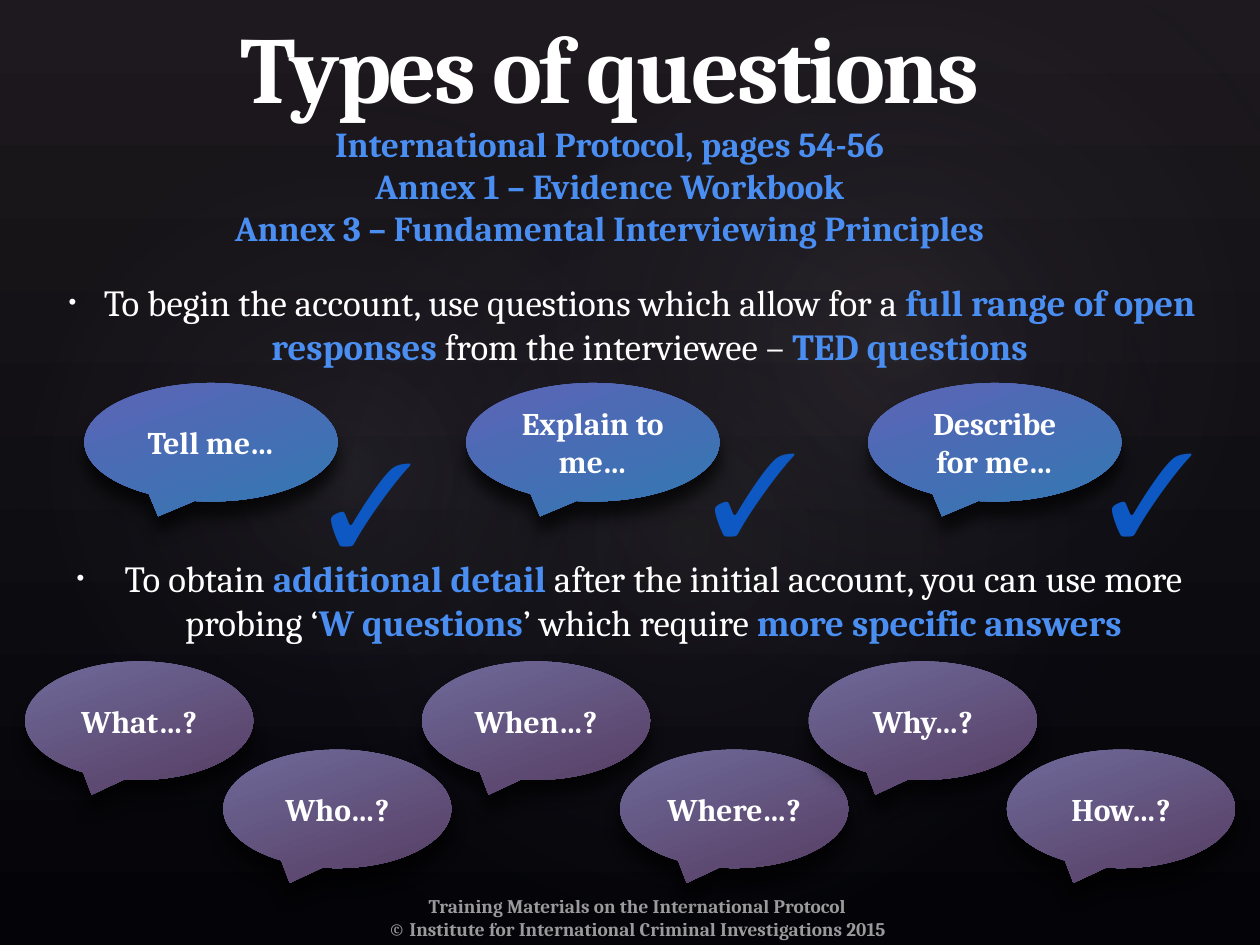
from lxml import etree
from pptx import Presentation
from pptx.dml.color import RGBColor
from pptx.enum.shapes import MSO_SHAPE
from pptx.enum.text import MSO_ANCHOR, MSO_AUTO_SIZE, PP_ALIGN
from pptx.oxml import parse_xml
from pptx.oxml.ns import qn
from pptx.util import Pt

CALLOUT, OVAL = MSO_SHAPE.OVAL_CALLOUT, MSO_SHAPE.OVAL
CENTER, LEFT = PP_ALIGN.CENTER, PP_ALIGN.LEFT
TOP, MIDDLE, BOTTOM = MSO_ANCHOR.TOP, MSO_ANCHOR.MIDDLE, MSO_ANCHOR.BOTTOM
NO_FIT = MSO_AUTO_SIZE.NONE
DRAWING = 'xmlns:a="http://schemas.openxmlformats.org/drawingml/2006/main"'
FONT, WHITE, ACCENT, CHECK_BLUE = "Cambria", "FFFFFF", "4A8EF2", "0E58C4"

HEADING = "Types of questions"
REFERENCES = [
    "International Protocol, pages 54-56",
    "Annex 1 – Evidence Workbook",
    "Annex 3 – Fundamental Interviewing Principles",
]
OPEN_ADVICE = [
    ("To begin the account, use questions which allow for a ", False),
    ("full range of open responses", True),
    (" from the interviewee – ", False),
    ("TED questions", True),
]
DETAIL_ADVICE = [
    ("To obtain ", False),
    ("additional detail", True),
    (" after the initial account, you can use more probing ‘", False),
    ("W questions", True),
    ("’ which require ", False),
    ("more specific answers", True),
]
TED_QUESTIONS = [("Tell me…", 48.2), ("Explain to me…", 266.4), ("Describe for me…", 496.1)]
CHECKS = [(180, 242), (399.6, 236.2), (626.4, 236.2)]
W_PAIRS = [("What…?", "Who…?", 14.4), ("When…?", "Where…?", 241.2), ("Why…?", "How…?", 462.2)]
CREDITS = [
    "Training Materials on the International Protocol",
    "© Institute for International Criminal Investigations 2015",
]
GLOWS = [
    (108, 82.1, 570.2, 449.3, 328.7, 7),
    (-21.6, 92.2, 436.3, 352.8, 294.3, 8),
    (257.8, 9.4, 510.5, 374.4, 328.7, 8),
]
TED_COLORS, W_COLORS = ("5C64B7", "3477B2"), ("6F6A9A", "573F65")


def color(value):
    return RGBColor.from_string(value)


def place(shape, left, top, width, height):
    shape.left, shape.top, shape.width, shape.height = map(Pt, (left, top, width, height))


def gradient_fill(shape, stops, direction):
    marks = "".join(
        f'<a:gs pos="{pos * 1000}"><a:srgbClr val="{tone}"><a:alpha val="{alpha * 1000}"/></a:srgbClr></a:gs>'
        for pos, tone, alpha in stops
    )
    fill = parse_xml(f"<a:gradFill {DRAWING}><a:gsLst>{marks}</a:gsLst>{direction}</a:gradFill>")
    shape.line.fill.background()
    shape._element.spPr.find(qn("a:ln")).addprevious(fill)


def add_run(paragraph, text, size, tone, bold):
    run = paragraph.add_run()
    run.text = text
    run.font.name, run.font.size, run.font.bold = FONT, Pt(size), bold
    run.font.color.rgb = color(tone)
    return run


def set_frame(shape, anchor, wrap=True):
    frame = shape.text_frame
    frame.auto_size, frame.vertical_anchor, frame.word_wrap = NO_FIT, anchor, wrap
    return frame


def add_text_box(slide, box, wrap=True):
    return set_frame(slide.shapes.add_textbox(*map(Pt, box)), TOP, wrap)


def write_advice(paragraph, parts, indent, hang):
    paragraph.alignment = CENTER
    props = paragraph._p.get_or_add_pPr()
    props.set("marL", str(Pt(indent)))
    props.set("indent", str(-Pt(hang)))
    etree.SubElement(props, qn("a:buSzPct"), val="60000")
    etree.SubElement(props, qn("a:buFont"), typeface="Arial")
    etree.SubElement(props, qn("a:buChar"), char="•")
    for text, stressed in parts:
        add_run(paragraph, text, 21, ACCENT if stressed else WHITE, stressed)


def add_bubble(slide, text, left, top, width, tones):
    bubble = slide.shapes.add_shape(CALLOUT, Pt(left), Pt(top), Pt(width), Pt(67.7))
    start, end = tones
    gradient_fill(bubble, [(0, start, 100), (100, end, 100)], '<a:lin ang="4200000" scaled="0"/>')
    bubble._element.spPr.append(parse_xml(
        f'<a:effectLst {DRAWING}><a:outerShdw blurRad="{Pt(9)}" dist="{Pt(9)}" dir="5400000" rotWithShape="0">'
        '<a:srgbClr val="000000"><a:alpha val="70000"/></a:srgbClr></a:outerShdw></a:effectLst>'
    ))
    frame = set_frame(bubble, MIDDLE)
    frame.margin_left = frame.margin_right = Pt(3)
    paragraph = frame.paragraphs[0]
    paragraph.alignment = CENTER
    add_run(paragraph, text, 18, WHITE, True)


def add_backdrop(slide):
    fill = slide.background.fill
    fill.gradient()
    fill.gradient_angle = 270
    for stop, tone in zip(fill.gradient_stops, ("1D191E", "040408")):
        stop.color.rgb = color(tone)
    center = '<a:path path="circle"><a:fillToRect l="50000" t="50000" r="50000" b="50000"/></a:path>'
    for depth, (left, top, width, height, rotation, alpha) in enumerate(GLOWS):
        glow = slide.shapes.add_shape(OVAL, Pt(left), Pt(top), Pt(width), Pt(height))
        glow.rotation = rotation
        glow.shadow.inherit = False
        gradient_fill(glow, [(0, "C4BCC6", alpha), (58, "242852", 0), (100, "242852", 0)], center)
        slide.shapes._spTree.insert(2 + depth, glow._element)


def main():
    prs = Presentation()
    prs.slide_width, prs.slide_height = Pt(720), Pt(540)
    slide = prs.slides.add_slide(prs.slide_layouts[1])
    add_backdrop(slide)

    title = slide.shapes.title
    place(title, 36.7, 9.4, 623.5, 136.1)
    heading = set_frame(title, BOTTOM).paragraphs[0]
    heading.alignment = CENTER
    add_run(heading, HEADING, 54, WHITE, True).font._element.set("spc", "-150")
    for reference in REFERENCES:
        heading.add_line_break()
        add_run(heading, reference, 20, ACCENT, True)

    credits = add_text_box(slide, (184.3, 507.6, 360, 28.8))
    for index, credit in enumerate(CREDITS):
        line = credits.add_paragraph() if index else credits.paragraphs[0]
        line.alignment = CENTER
        run = add_run(line, credit, 11, WHITE, True)
        tone = run.font._element.find(qn("a:solidFill")).find(qn("a:srgbClr"))
        etree.SubElement(tone, qn("a:alpha"), val="60000")

    body = slide.placeholders[1]
    place(body, 20.2, 151.2, 680.4, 67.7)
    advice = set_frame(body, MIDDLE).paragraphs[0]
    advice.space_before = Pt(4)
    write_advice(advice, OPEN_ADVICE, 21.6, 20.2)
    detail = add_text_box(slide, (20.2, 313.9, 679, 58.3))
    write_advice(detail.paragraphs[0], DETAIL_ADVICE, 27.4, 27.4)

    for question, left in TED_QUESTIONS:
        add_bubble(slide, question, left, 218.9, 144.7, TED_COLORS)
    for left, top in CHECKS:
        mark = add_text_box(slide, (left, top, 67, 87.1), wrap=False).paragraphs[0]
        mark.alignment = LEFT
        add_run(mark, "✓", 66, CHECK_BLUE, False)
    for upper, lower, left in W_PAIRS:
        add_bubble(slide, upper, left, 378, 130.3, W_COLORS)
        add_bubble(slide, lower, left + 113.2, 428.4, 130.3, W_COLORS)

    prs.save("out.pptx")


if __name__ == "__main__":
    main()
